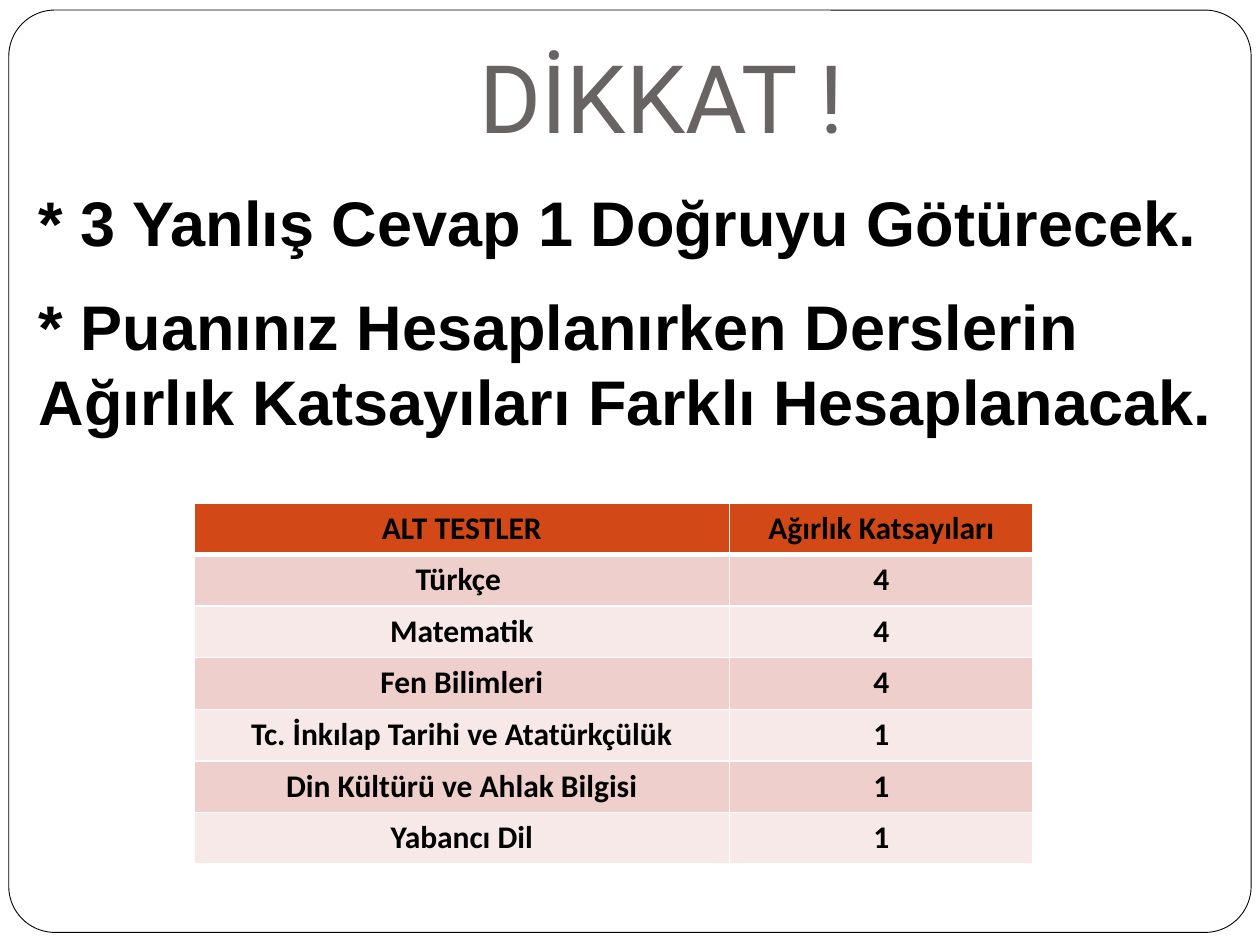
from lxml import etree
from pptx import Presentation
from pptx.dml.color import RGBColor
from pptx.enum.shapes import MSO_SHAPE
from pptx.enum.text import MSO_ANCHOR, MSO_AUTO_SIZE, PP_ALIGN
from pptx.oxml.ns import qn
from pptx.util import Inches, Pt

ROUNDED = MSO_SHAPE.ROUNDED_RECTANGLE
CENTER, LEFT = PP_ALIGN.CENTER, PP_ALIGN.LEFT
BOTTOM = MSO_ANCHOR.BOTTOM
FIXED = MSO_AUTO_SIZE.NONE
GROW = MSO_AUTO_SIZE.SHAPE_TO_FIT_TEXT
TITLE_ONLY = 5

COLORS = {
    "white": "FFFFFF",
    "black": "000000",
    "title": "696464",
    "header": "D34817",
    "odd_row": "EFCFCC",
    "even_row": "F7E9E8",
}

NOTES = [
    (1.41, 0.71, "* 3 Yanlış Cevap 1 Doğruyu Götürecek."),
    (2.23, 1.31, "* Puanınız Hesaplanırken Derslerin Ağırlık Katsayıları Farklı Hesaplanacak."),
]

WEIGHTS = [
    ("ALT TESTLER", "Ağırlık Katsayıları"),
    ("Türkçe ", "4"),
    ("Matematik", "4"),
    ("Fen Bilimleri", "4"),
    ("Tc. İnkılap Tarihi ve Atatürkçülük", "1"),
    ("Din Kültürü ve Ahlak Bilgisi", "1"),
    ("Yabancı Dil", "1"),
]
COLUMN_WIDTHS = (4.25, 2.41)
ROW_HEIGHT = 0.41


def color(name):
    return RGBColor.from_string(COLORS[name])


def write(text_frame, text, font, size, color_name, bold=False, align=LEFT):
    paragraph = text_frame.paragraphs[0]
    paragraph.alignment = align
    run = paragraph.add_run()
    run.text = text
    run.font.name = font
    run.font.size = Pt(size)
    run.font.bold = bold
    run.font.color.rgb = color(color_name)


def add_frame(slide):
    frame = slide.shapes.add_shape(
        ROUNDED, Inches(0.07), Inches(0.08), Inches(9.86), Inches(7.32))
    frame.adjustments[0] = 0.05
    frame.shadow.inherit = False
    frame.fill.solid()
    frame.fill.fore_color.rgb = color("white")
    frame.line.color.rgb = color("black")
    frame.line.width = Pt(0.5)
    # Keep the frame behind the title
    slide.shapes.title.element.addprevious(frame.element)


def set_title(slide, text):
    title = slide.shapes.title
    title.left, title.top = Inches(1), Inches(0.3)
    title.width, title.height = Inches(8.5), Inches(1.01)
    text_frame = title.text_frame
    text_frame.auto_size = FIXED
    text_frame.vertical_anchor = BOTTOM
    text_frame.margin_bottom = Inches(0.1)
    write(text_frame, text, "Roboto", 54, "title", align=CENTER)


def add_note(slide, top, height, text):
    box = slide.shapes.add_textbox(
        Inches(0.21), Inches(top), Inches(9.61), Inches(height))
    box.text_frame.word_wrap = True
    box.text_frame.auto_size = GROW
    write(box.text_frame, text, "Arial", 36, "black", bold=True)


def set_borders(cell, bottom_width):
    properties = cell._tc.get_or_add_tcPr()
    for side, width in (("L", 1), ("R", 1), ("T", 1), ("B", bottom_width)):
        line = etree.SubElement(properties, qn(f"a:ln{side}"), w=str(Pt(width)))
        fill = etree.SubElement(line, qn("a:solidFill"))
        etree.SubElement(fill, qn("a:srgbClr"), val=COLORS["white"])


def add_weight_table(slide):
    table = slide.shapes.add_table(
        len(WEIGHTS), len(COLUMN_WIDTHS), Inches(1.54), Inches(3.99),
        Inches(sum(COLUMN_WIDTHS)), Inches(ROW_HEIGHT * len(WEIGHTS))).table
    for column, width in zip(table.columns, COLUMN_WIDTHS):
        column.width = Inches(width)
    for row_index, values in enumerate(WEIGHTS):
        if row_index == 0:
            fill_name = "header"
        else:
            fill_name = "odd_row" if row_index % 2 else "even_row"
        for column_index, value in enumerate(values):
            cell = table.cell(row_index, column_index)
            # Thick rule below the header row
            set_borders(cell, 3 if row_index == 0 else 1)
            cell.fill.solid()
            cell.fill.fore_color.rgb = color(fill_name)
            write(cell.text_frame, value, "Calibri", 18, "black", True, CENTER)


def main():
    presentation = Presentation()
    presentation.slide_width = Inches(10)
    presentation.slide_height = Inches(7.5)
    slide = presentation.slides.add_slide(presentation.slide_layouts[TITLE_ONLY])

    # Frame and title
    add_frame(slide)
    set_title(slide, "DİKKAT !")

    # Exam rules
    for top, height, text in NOTES:
        add_note(slide, top, height, text)

    # Weights by subject
    add_weight_table(slide)
    presentation.save("out.pptx")


if __name__ == "__main__":
    main()
